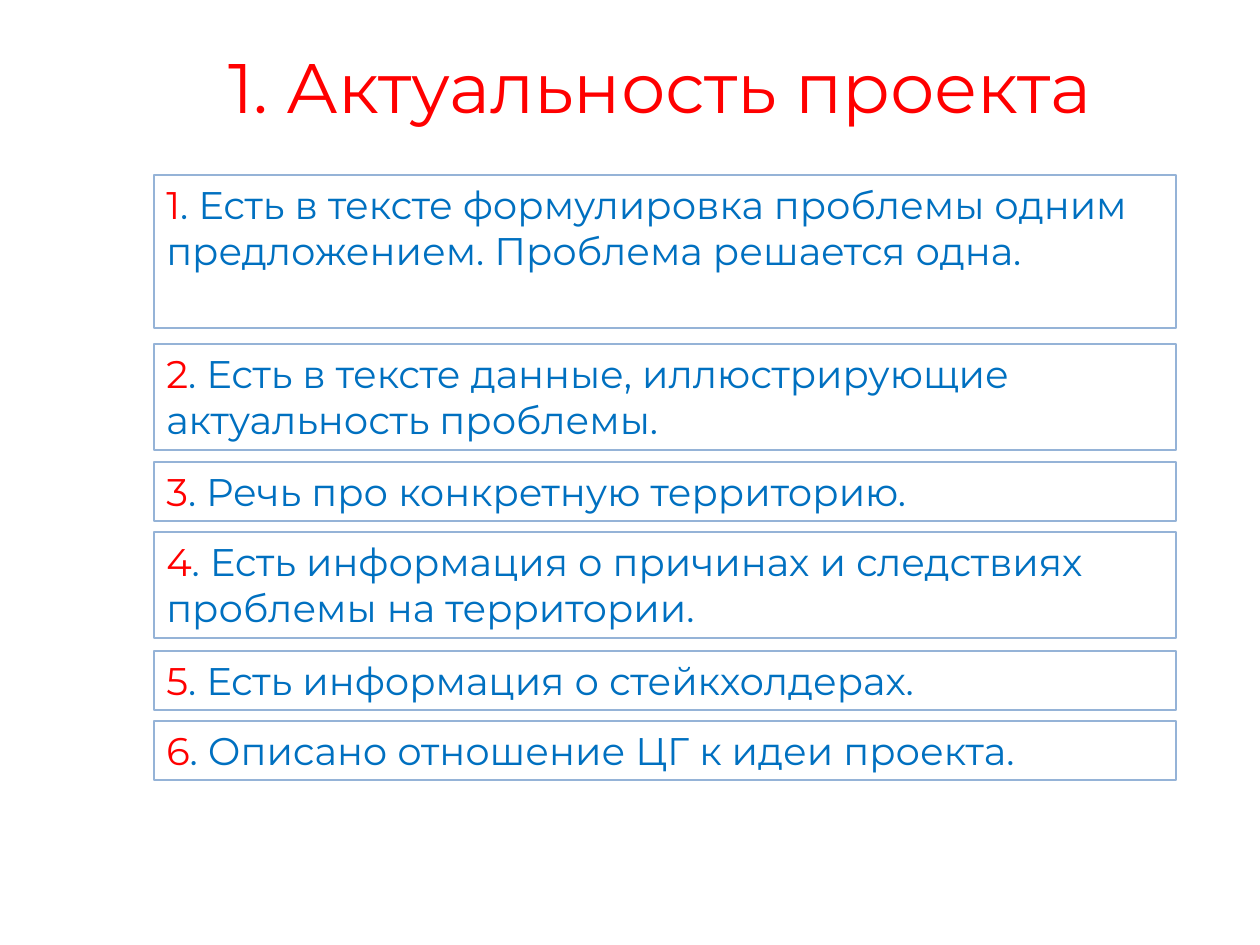
from dataclasses import dataclass

from pptx import Presentation
from pptx.dml.color import RGBColor
from pptx.enum.shapes import MSO_SHAPE as Shape
from pptx.enum.text import MSO_ANCHOR as Anchor, PP_ALIGN as Align
from pptx.util import Emu, Inches, Pt

PX_PER_INCH = 126


@dataclass(frozen=True)
class Theme:
    font: str = "Montserrat"
    accent: RGBColor = RGBColor(0xFF, 0x00, 0x00)
    body: RGBColor = RGBColor(0x00, 0x70, 0xC0)
    border: RGBColor = RGBColor(0x95, 0xB3, 0xD7)
    title_size: int = 40
    body_size: int = 22
    border_width: float = 0.75


THEME = Theme()
CRITERIA_LEFT, CRITERIA_WIDTH = 154, 1022

# Top, height and wording of each criterion, numbered in order
CRITERIA = [
    (175, 153, "Есть в тексте формулировка проблемы одним предложением. Проблема решается одна."),
    (344, 106, "Есть в тексте данные, иллюстрирующие актуальность проблемы."),
    (462, 59, "Речь про конкретную территорию."),
    (532, 106, "Есть информация о причинах и следствиях проблемы на территории."),
    (651, 59, "Есть информация о стейкхолдерах."),
    (721, 59, "Описано отношение ЦГ к идеи проекта."),
]


def px(*lengths):
    return [Emu(round(length * Inches(1) / PX_PER_INCH)) for length in lengths]


def add_run(paragraph, text, size, color):
    run = paragraph.add_run()
    run.text = text
    run.font.name = THEME.font
    run.font.size = Pt(size)
    run.font.color.rgb = color


def add_title(slide, text):
    frame = slide.shapes.add_textbox(*px(94, 37, 1132, 97)).text_frame
    frame.word_wrap = True
    paragraph = frame.paragraphs[0]
    paragraph.alignment = Align.CENTER
    add_run(paragraph, text, THEME.title_size, THEME.accent)


def add_criterion(slide, number, top, height, text):
    """Outlined box with a highlighted number before its text."""
    box = slide.shapes.add_shape(Shape.RECTANGLE, *px(CRITERIA_LEFT, top, CRITERIA_WIDTH, height))
    box.shadow.inherit = False
    box.fill.background()
    box.line.color.rgb = THEME.border
    box.line.width = Pt(THEME.border_width)
    frame = box.text_frame
    frame.word_wrap = True
    frame.vertical_anchor = Anchor.TOP
    paragraph = frame.paragraphs[0]
    paragraph.alignment = Align.LEFT
    add_run(paragraph, str(number), THEME.body_size, THEME.accent)
    add_run(paragraph, f". {text}", THEME.body_size, THEME.body)


def main():
    presentation = Presentation()
    presentation.slide_width = Inches(10)
    presentation.slide_height = Inches(7.5)
    slide = presentation.slides.add_slide(presentation.slide_layouts[6])
    add_title(slide, "1. Актуальность проекта")
    for number, (top, height, text) in enumerate(CRITERIA, start=1):
        add_criterion(slide, number, top, height, text)
    presentation.save("out.pptx")


if __name__ == "__main__":
    main()
